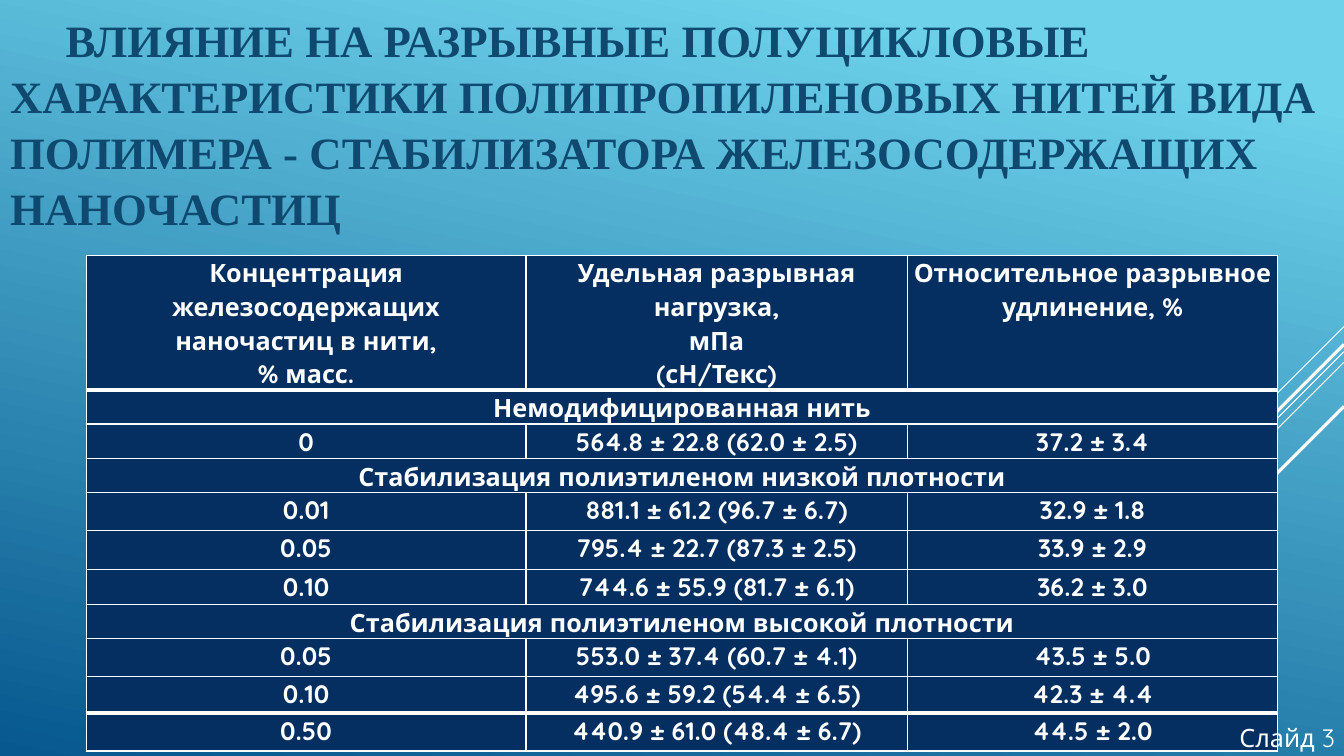
from lxml.etree import SubElement
from pptx import Presentation
from pptx.dml.color import RGBColor
from pptx.enum.shapes import MSO_CONNECTOR as Connector
from pptx.enum.text import MSO_ANCHOR as Anchor, MSO_AUTO_SIZE as AutoSize, PP_ALIGN as Align
from pptx.oxml.ns import qn
from pptx.util import Emu, Pt

COLORS = {
    "sky": "6ED2EB",
    "deep": "06588E",
    "title": "0F496F",
    "cell": "052F61",
    "white": "FFFFFF",
}
TITLE_FONT = "Times New Roman"
TEXT_FONT = "Quicksand"
WIDTH, HEIGHT = 1280, 720

TITLE = (
    "ВЛИЯНИЕ НА РАЗРЫВНЫЕ ПОЛУЦИКЛОВЫЕ ХАРАКТЕРИСТИКИ ПОЛИПРОПИЛЕНОВЫХ НИТЕЙ "
    "ВИДА ПОЛИМЕРА - СТАБИЛИЗАТОРА ЖЕЛЕЗОСОДЕРЖАЩИХ НАНОЧАСТИЦ"
)

# Diagonals running down and left from the right edge: start y, extent, weight
DIAGONALS = [
    (311, 96, 0.75),
    (335, 313, 0.75),
    (345, 199, 0.75),
    (328, 183, 2.25),
    (387, 134, 2.25),
]

COLUMN_WIDTHS = [419, 363, 353]
# Row height and cell texts; a single text spans the whole row
ROWS = [
    (121, ["Концентрация железосодержащих наночастиц в нити,\n% масс.",
           "Удельная разрывная нагрузка,\nмПа\n(сН/Текс)",
           "Относительное разрывное удлинение, %"]),
    (30, ["Немодифицированная нить"]),
    (33, ["0", "564.8 ± 22.8 (62.0 ± 2.5)", "37.2 ± 3.4"]),
    (30, ["Стабилизация полиэтиленом низкой плотности"]),
    (36, ["0.01", "881.1 ± 61.2 (96.7 ± 6.7)", "32.9 ± 1.8"]),
    (37, ["0.05", "795.4 ± 22.7 (87.3 ± 2.5)", "33.9 ± 2.9"]),
    (34, ["0.10", "744.6 ± 55.9 (81.7 ± 6.1)", "36.2 ± 3.0"]),
    (30, ["Стабилизация полиэтиленом высокой плотности"]),
    (36, ["0.05", "553.0 ± 37.4 (60.7 ± 4.1)", "43.5 ± 5.0"]),
    (35, ["0.10", "495.6 ± 59.2 (54.4 ± 6.5)", "42.3 ± 4.4"]),
    (36, ["0.50", "440.9 ± 61.0 (48.4 ± 6.7)", "44.5 ± 2.0"]),
]


def px(length):
    return Emu(length * 9525)


def color(name):
    return RGBColor.from_string(COLORS[name])


class SlideBuilder:
    def __init__(self, slide):
        self.slide = slide

    def background(self, start, end, angle):
        fill = self.slide.background.fill
        fill.gradient()
        fill.gradient_angle = angle
        for stop, name, position in zip(fill.gradient_stops, (start, end), (0.1, 1)):
            stop.color.rgb = color(name)
            stop.position = position

    def run(self, paragraph, text, size, font, color_name, bold=False):
        run = paragraph.add_run()
        run.text = text
        run.font.size = Pt(size)
        run.font.name = font
        run.font.bold = bold
        run.font.color.rgb = color(color_name)

    def title(self, text, left, top, width, height, indent):
        shape = self.slide.shapes.title
        shape.left, shape.top = px(left), px(top)
        shape.width, shape.height = px(width), px(height)
        frame = shape.text_frame
        frame.word_wrap = True
        frame.auto_size = AutoSize.NONE
        frame.vertical_anchor = Anchor.MIDDLE
        paragraph = frame.paragraphs[0]
        paragraph.alignment = Align.LEFT
        paragraph.line_spacing = 1.04
        paragraph.space_after = Pt(6)
        paragraph._p.get_or_add_pPr().set("indent", str(px(indent)))
        self.run(paragraph, text, 32, TITLE_FONT, "title", bold=True)

    def line(self, x1, y1, x2, y2, weight):
        connector = self.slide.shapes.add_connector(
            Connector.STRAIGHT, px(x1), px(y1), px(x2), px(y2))
        connector.line.color.rgb = color("white")
        connector.line.width = Pt(weight)
        SubElement(connector._element.spPr, qn("a:effectLst"))

    def borders(self, cell, top, bottom):
        properties = cell._tc.get_or_add_tcPr()
        for tag, weight in (("lnL", 1), ("lnR", 1), ("lnT", top), ("lnB", bottom)):
            edge = SubElement(properties, qn(f"a:{tag}"), w=str(Pt(weight)))
            fill = SubElement(edge, qn("a:solidFill"))
            SubElement(fill, qn("a:srgbClr"), val=COLORS["white"])

    def cell_text(self, cell, text):
        cell.margin_left = cell.margin_right = px(6)
        cell.margin_top = cell.margin_bottom = 0
        frame = cell.text_frame
        for index, line in enumerate(text.split("\n")):
            paragraph = frame.add_paragraph() if index else frame.paragraphs[0]
            paragraph.alignment = Align.CENTER
            paragraph.line_spacing = 1.07
            self.run(paragraph, line, 18, TEXT_FONT, "white", bold=True)

    def table(self, left, top, widths, rows):
        height = sum(row_height for row_height, _ in rows)
        table = self.slide.shapes.add_table(
            len(rows), len(widths), px(left), px(top), px(sum(widths)), px(height)).table
        for column, width in zip(table.columns, widths):
            column.width = px(width)
        last = len(rows) - 1
        thick_edges = {1, last}
        for index, (row_height, texts) in enumerate(rows):
            row = table.rows[index]
            row.height = px(row_height)
            for cell in row.cells:
                self.borders(cell, 3 if index in thick_edges else 1,
                             3 if index + 1 in thick_edges else 1)
                cell.fill.solid()
                cell.fill.fore_color.rgb = color("cell")
            if len(texts) == 1:
                row.cells[0].merge(row.cells[len(widths) - 1])
            for cell, text in zip(row.cells, texts):
                self.cell_text(cell, text)

    def label(self, text, left, top, width, height):
        box = self.slide.shapes.add_textbox(px(left), px(top), px(width), px(height))
        frame = box.text_frame
        frame.word_wrap = False
        frame.auto_size = AutoSize.SHAPE_TO_FIT_TEXT
        self.run(frame.paragraphs[0], text, 18, TEXT_FONT, "white")


def main():
    presentation = Presentation()
    presentation.slide_width, presentation.slide_height = px(WIDTH), px(HEIGHT)
    title_only = presentation.slide_layouts[5]
    builder = SlideBuilder(presentation.slides.add_slide(title_only))
    builder.background("sky", "deep", 258)
    for y, extent, weight in DIAGONALS:
        builder.line(WIDTH, y, WIDTH - extent, y + extent, weight)
    builder.title(TITLE, 0, 46, 1301, 142, indent=53)
    builder.table(82, 243, COLUMN_WIDTHS, ROWS)
    builder.label("Слайд 3", 1171, 683, 119, 38)
    presentation.save("out.pptx")


if __name__ == "__main__":
    main()
